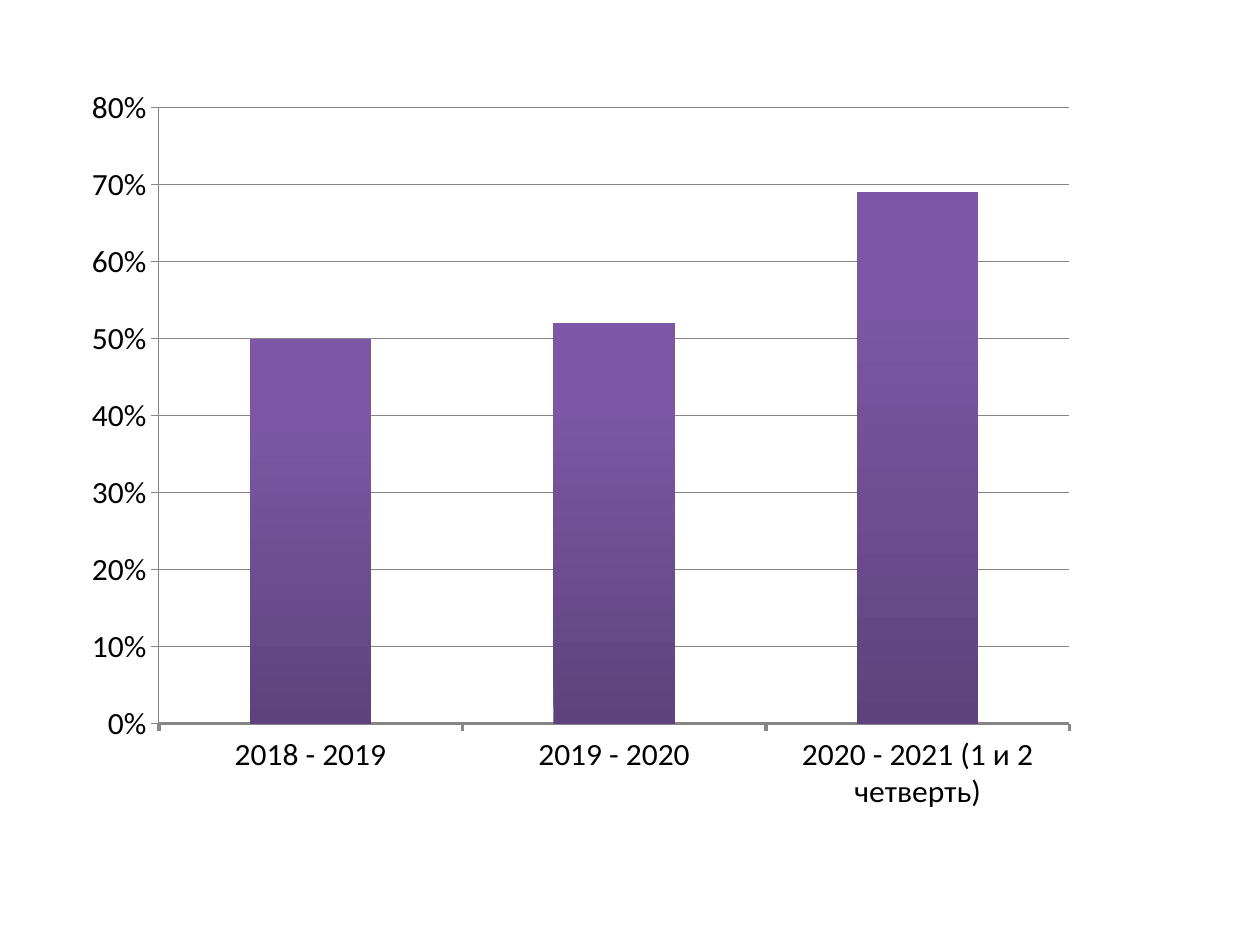
"""Build a slide with a column chart of shares by school year."""
from lxml.etree import SubElement
from pptx import Presentation
from pptx.chart.data import CategoryChartData
from pptx.dml.color import RGBColor
from pptx.enum.chart import XL_CHART_TYPE as ChartType, XL_TICK_MARK as TickMark
from pptx.oxml.ns import qn
from pptx.util import Inches, Pt

BLACK = RGBColor(0x00, 0x00, 0x00)
GRAY = RGBColor(0x86, 0x86, 0x86)
DARK_PURPLE = RGBColor(0x5F, 0x42, 0x7D)
PURPLE = RGBColor(0x7D, 0x57, 0xA5)


def set_line(line, width):
    line.color.rgb = GRAY
    line.width = Pt(width)


deck = Presentation()
deck.slide_width, deck.slide_height = Inches(10), Inches(7.5)
page = deck.slides.add_slide(deck.slide_layouts[6])

data = CategoryChartData(number_format="0.00%")
data.categories = ["2018 - 2019", "2019 - 2020", "2020 - 2021 (1 и 2 четверть)"]
data.add_series("Series 1", [0.5, 0.52, 0.69])
chart = page.shapes.add_chart(
    ChartType.COLUMN_CLUSTERED, Inches(0.43), Inches(0.68), Inches(8.74), Inches(5.75), data
).chart
chart.has_title = False
chart.has_legend = False
chart.font.name = "Calibri"
chart.font.size = Pt(18)
chart.font.color.rgb = BLACK

plot_area = chart.element.find(".//" + qn("c:plotArea"))
layout = plot_area.find(qn("c:layout"))
if layout is None:
    layout = SubElement(plot_area, qn("c:layout"))
    plot_area.insert(0, layout)
manual = SubElement(layout, qn("c:manualLayout"))
settings = {"layoutTarget": "inner", "xMode": "edge", "yMode": "edge",
            "x": "0.095", "y": "0.031", "w": "0.827", "h": "0.87"}
for name, value in settings.items():
    SubElement(manual, qn(f"c:{name}")).set("val", value)

plot = chart.plots[0]
plot.gap_width = 150
plot.vary_by_categories = False
fill = plot.series[0].format.fill
fill.gradient()
fill.gradient_angle = 90
for stop, color, position in zip(fill.gradient_stops, (DARK_PURPLE, PURPLE), (0, 0.8)):
    stop.color.rgb = color
    stop.position = position

for axis, width in ((chart.category_axis, 2), (chart.value_axis, 0.75)):
    axis.major_tick_mark = TickMark.OUTSIDE
    axis.minor_tick_mark = TickMark.NONE
    set_line(axis.format.line, width)

values = chart.value_axis
values.minimum_scale, values.maximum_scale, values.major_unit = 0, 0.8, 0.1
values.tick_labels.number_format = "0%"
values.tick_labels.number_format_is_linked = False
values.has_major_gridlines = True
set_line(values.major_gridlines.format.line, 0.75)

deck.save("out.pptx")
